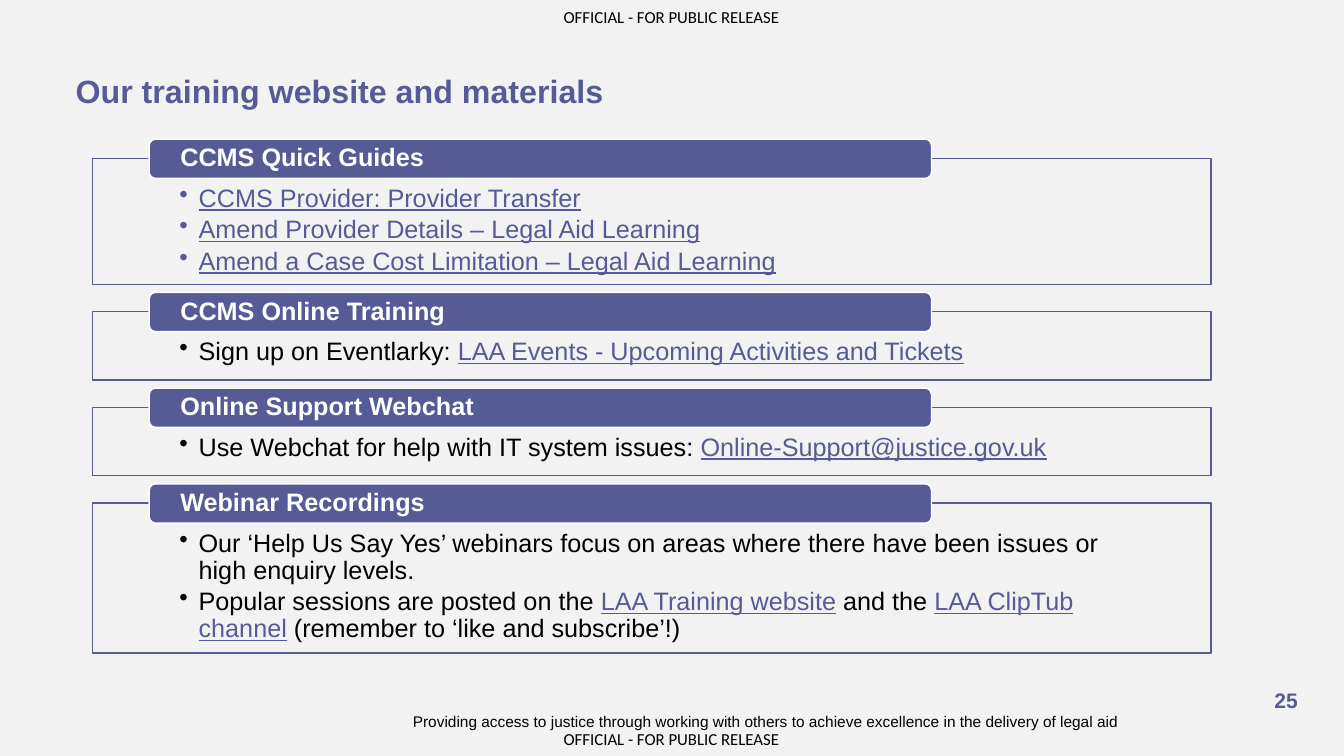
from pptx import Presentation
from pptx.dml.color import RGBColor
from pptx.enum.shapes import MSO_SHAPE
from pptx.enum.text import MSO_ANCHOR, PP_ALIGN
from pptx.util import Inches, Pt
from lxml import etree

RECTANGLE, ROUNDED = MSO_SHAPE.RECTANGLE, MSO_SHAPE.ROUNDED_RECTANGLE
TOP, MIDDLE = MSO_ANCHOR.TOP, MSO_ANCHOR.MIDDLE
LEFT, CENTER, RIGHT = PP_ALIGN.LEFT, PP_ALIGN.CENTER, PP_ALIGN.RIGHT
PURPLE = RGBColor(0x56, 0x5B, 0x96)
PALE = RGBColor(0xF2, 0xF2, 0xF2)
WHITE = RGBColor(0xFF, 0xFF, 0xFF)
BLACK = RGBColor(0, 0, 0)
DRAWING = "{http://schemas.openxmlformats.org/drawingml/2006/main}"

PLAIN, LINK = False, True
TITLE = "Our training website and materials"
MARKING = "OFFICIAL - FOR PUBLIC RELEASE"
MISSION = ("Providing access to justice through working with others "
           "to achieve excellence in the delivery of legal aid")
PAGE_NUMBER = "25"
SECTIONS = [
    ("CCMS Quick Guides", 1.25, [
        [("CCMS Provider: Provider Transfer", LINK)],
        [("Amend Provider Details – Legal Aid Learning", LINK)],
        [("Amend a Case Cost Limitation – Legal Aid Learning", LINK)],
    ]),
    ("CCMS Online Training", 0.68, [
        [("Sign up on Eventlarky: ", PLAIN),
         ("LAA Events - Upcoming Activities and Tickets", LINK)],
    ]),
    ("Online Support Webchat", 0.68, [
        [("Use Webchat for help with IT system issues: ", PLAIN),
         ("Online-Support@justice.gov.uk", LINK)],
    ]),
    ("Webinar Recordings", 1.49, [
        [("Our ‘Help Us Say Yes’ webinars focus on areas where there have "
          "been issues or high enquiry levels.", PLAIN)],
        [("Popular sessions are posted on the ", PLAIN),
         ("LAA Training website", LINK),
         (" and the ", PLAIN),
         ("LAA ClipTub channel", LINK),
         (" (remember to ‘like and subscribe’!)", PLAIN)],
    ]),
]
FIRST_TOP, GAP = 1.57, 0.27
FRAME_LEFT, FRAME_WIDTH = 0.92, 11.09
TAB_LEFT, TAB_WIDTH, TAB_HEIGHT, TAB_RISE = 1.48, 7.76, 0.39, 0.19


def set_frame(box, anchor, left=0, top=0, right=0, bottom=0, wrap=True):
    frame = box.text_frame
    frame.word_wrap = wrap
    frame.vertical_anchor = anchor
    frame.margin_left, frame.margin_top = Inches(left), Inches(top)
    frame.margin_right, frame.margin_bottom = Inches(right), Inches(bottom)
    return frame


def style(font, size, color, bold=False, name="Arial"):
    font.name, font.size, font.bold = name, Pt(size), bold
    font.color.rgb = color


def add_label(page, text, area, size, color, bold=False, align=LEFT,
              name="Arial", anchor=MIDDLE, wrap=True):
    box = page.shapes.add_textbox(*map(Inches, area))
    para = set_frame(box, anchor, wrap=wrap).paragraphs[0]
    para.text = text
    para.alignment = align
    style(para.runs[0].font, size, color, bold, name)


def add_panel(page, kind, area, fill, line):
    panel = page.shapes.add_shape(kind, *map(Inches, area))
    panel.shadow.inherit = False
    panel.fill.solid()
    panel.fill.fore_color.rgb = fill
    panel.line.color.rgb = line
    panel.line.width = Pt(1)
    return panel


def add_bullet(para, spans):
    properties = para._p.get_or_add_pPr()
    properties.set("marL", str(Inches(0.19)))
    properties.set("indent", str(-Inches(0.19)))
    etree.SubElement(properties, DRAWING + "buChar", char="•")
    para.alignment = LEFT
    para.line_spacing = 0.9
    para.space_after = Pt(3)
    for text, linked in spans:
        span = para.add_run()
        span.text = text
        style(span.font, 18, PURPLE if linked else BLACK)
        span.font.underline = linked


def add_section(page, top, heading, height, bullets):
    panel = add_panel(page, RECTANGLE, (FRAME_LEFT, top, FRAME_WIDTH, height), PALE, PURPLE)
    frame = set_frame(panel, TOP, 0.86, 0.27, 0.86, 0.14)
    for index, spans in enumerate(bullets):
        add_bullet(frame.add_paragraph() if index else frame.paragraphs[0], spans)

    tab = add_panel(page, ROUNDED, (TAB_LEFT, top - TAB_RISE, TAB_WIDTH, TAB_HEIGHT), PURPLE, WHITE)
    para = set_frame(tab, MIDDLE, 0.29, 0, 0.29).paragraphs[0]
    para.text = heading
    para.alignment = LEFT
    para.line_spacing = 0.9
    style(para.runs[0].font, 18, WHITE, True)


def main():
    deck = Presentation()
    deck.slide_width, deck.slide_height = Inches(13.33), Inches(7.5)
    page = deck.slides.add_slide(deck.slide_layouts[6])
    page.background.fill.solid()
    page.background.fill.fore_color.rgb = PALE

    for top in (0.07, 7.23):
        add_label(page, MARKING, (5.59, top, 2.18, 0.2), 12, BLACK,
                  name="Calibri", anchor=TOP, wrap=False)
    add_label(page, TITLE, (0.75, 0.41, 11.76, 0.98), 23, PURPLE, True)

    top = FIRST_TOP
    for heading, height, bullets in SECTIONS:
        add_section(page, top, heading, height, bullets)
        top += height + GAP

    add_label(page, MISSION, (3.22, 7.06, 7.88, 0.2), 11, BLACK, align=RIGHT)
    add_label(page, PAGE_NUMBER, (12.51, 6.75, 0.49, 0.4), 15, PURPLE, True, CENTER)
    deck.save("out.pptx")


if __name__ == "__main__":
    main()
